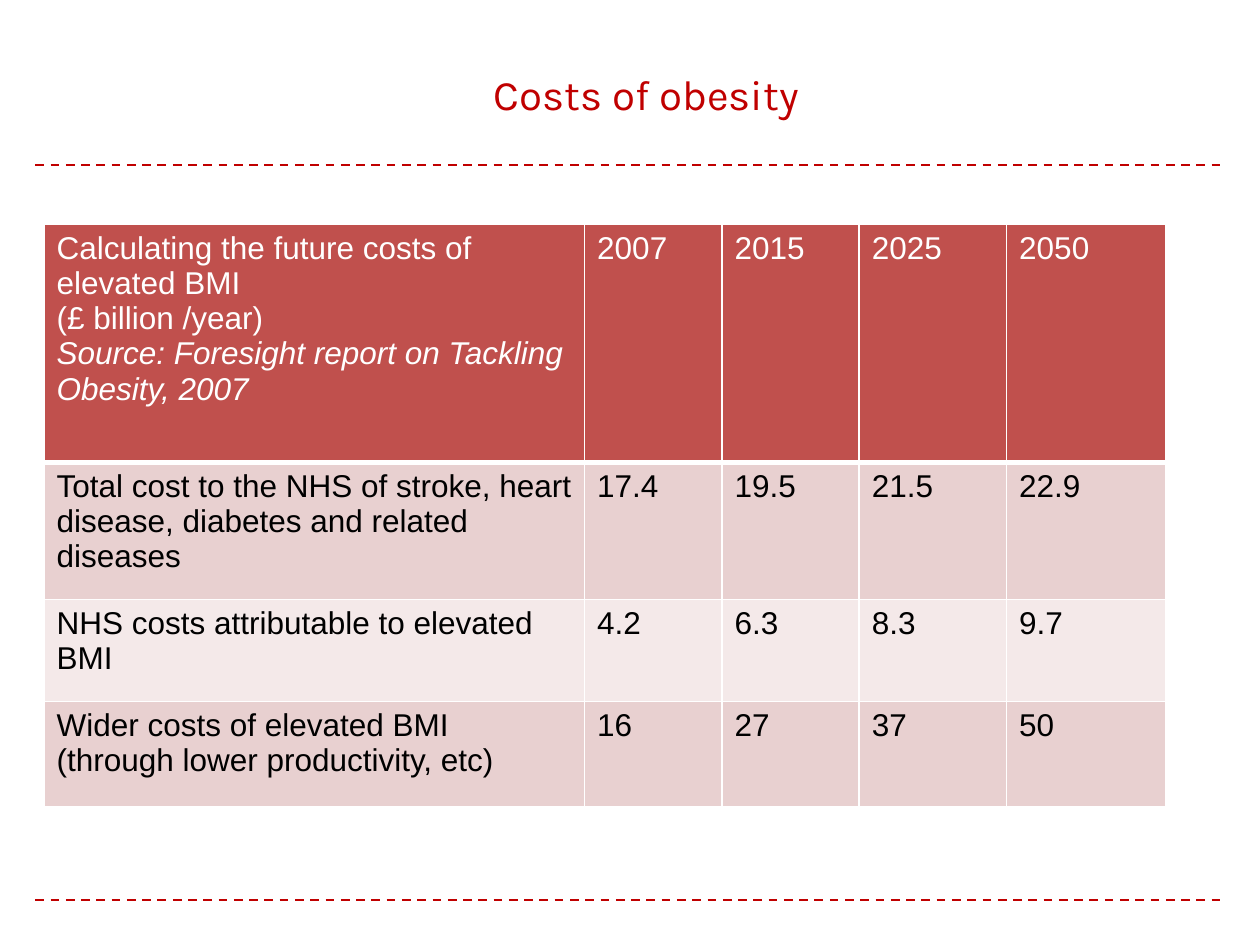
from typing import NamedTuple

from lxml.etree import SubElement
from pptx import Presentation
from pptx.dml.color import RGBColor
from pptx.enum.dml import MSO_LINE_DASH_STYLE as Dash
from pptx.enum.shapes import MSO_CONNECTOR as Connector
from pptx.enum.text import MSO_ANCHOR as Anchor, PP_ALIGN as Align
from pptx.oxml.ns import qn
from pptx.util import Inches, Pt

COLORS = {
    "accent": "C00000",
    "header": "C0504D",
    "band_dark": "E8D0D0",
    "band_light": "F4E9E9",
    "white": "FFFFFF",
    "black": "000000",
}


class CostRow(NamedTuple):
    label: str
    values: tuple[str, ...]
    height: float
    fill: str
    text: str = "black"
    bottom_border: float = 1


COLUMN_WIDTHS = (4.29, 1.09, 1.09, 1.17, 1.26)
COST_ROWS = (
    CostRow(
        "Calculating the future costs of elevated BMI\n(£ billion /year)\n"
        "Source: Foresight report on Tackling Obesity, 2007",
        ("2007", "2015", "2025", "2050"), 1.89, "header", "white", 3),
    CostRow(
        "Total cost to the NHS of stroke, heart disease, diabetes and related diseases",
        ("17.4", "19.5", "21.5", "22.9"), 1.09, "band_dark"),
    CostRow("NHS costs attributable to elevated BMI",
            ("4.2", "6.3", "8.3", "9.7"), 0.81, "band_light"),
    CostRow("Wider costs of elevated BMI (through lower productivity, etc)",
            ("16", "27", "37", "50"), 0.83, "band_dark"),
)
RULE_HEIGHTS = (1.31, 7.14)


def rgb(name: str) -> RGBColor:
    return RGBColor.from_string(COLORS[name])


def format_text(frame, font_name: str, size: float, color: str) -> None:
    for paragraph in frame.paragraphs:
        for run in paragraph.runs:
            run.font.name = font_name
            run.font.size = Pt(size)
            run.font.bold = False
            run.font.color.rgb = rgb(color)


def add_rule(slide, y: float) -> None:
    rule = slide.shapes.add_connector(
        Connector.STRAIGHT, Inches(0.28), Inches(y), Inches(9.72), Inches(y))
    rule.line.color.rgb = rgb("accent")
    rule.line.width = Pt(1.25)
    rule.line.dash_style = Dash.DASH
    SubElement(rule._element.spPr, qn("a:effectLst"))


def add_borders(cell, bottom: float) -> None:
    properties = cell._tc.get_or_add_tcPr()
    for side, width in (("L", 1), ("R", 1), ("T", 1), ("B", bottom)):
        border = SubElement(properties, qn(f"a:ln{side}"), w=str(Pt(width)))
        fill = SubElement(border, qn("a:solidFill"))
        SubElement(fill, qn("a:srgbClr"), val=COLORS["white"])


def fill_cell(cell, text: str, row: CostRow) -> None:
    cell.text_frame.text = text
    format_text(cell.text_frame, "Arial", 18, row.text)
    add_borders(cell, row.bottom_border)
    cell.fill.solid()
    cell.fill.fore_color.rgb = rgb(row.fill)


def add_cost_table(slide) -> None:
    costs = slide.shapes.add_table(
        len(COST_ROWS), len(COLUMN_WIDTHS), Inches(0.35), Inches(1.78),
        Inches(sum(COLUMN_WIDTHS)), Inches(sum(row.height for row in COST_ROWS))).table
    for column, width in zip(costs.columns, COLUMN_WIDTHS):
        column.width = Inches(width)
    for table_row, row in zip(costs.rows, COST_ROWS):
        table_row.height = Inches(row.height)
        for cell, text in zip(table_row.cells, (row.label, *row.values)):
            fill_cell(cell, text, row)

    # The source line closes the heading cell
    source = costs.cell(0, 0).text_frame.paragraphs[-1]
    source.runs[0].font.italic = True


def add_title(slide) -> None:
    title = slide.shapes.title
    title.left, title.top = Inches(0.67), Inches(0.25)
    title.width, title.height = Inches(8.92), Inches(0.74)
    frame = title.text_frame
    frame.text = "Costs of obesity"
    frame.vertical_anchor = Anchor.BOTTOM
    frame.paragraphs[0].alignment = Align.CENTER
    format_text(frame, "Karla", 24, "accent")


def main() -> None:
    deck = Presentation()
    deck.slide_width, deck.slide_height = Inches(10), Inches(7.5)
    slide = deck.slides.add_slide(deck.slide_layouts[5])

    # Dashed rules above and below the content
    for y in RULE_HEIGHTS:
        add_rule(slide, y)

    # Title and table
    add_title(slide)
    add_cost_table(slide)
    deck.save("out.pptx")


if __name__ == "__main__":
    main()
